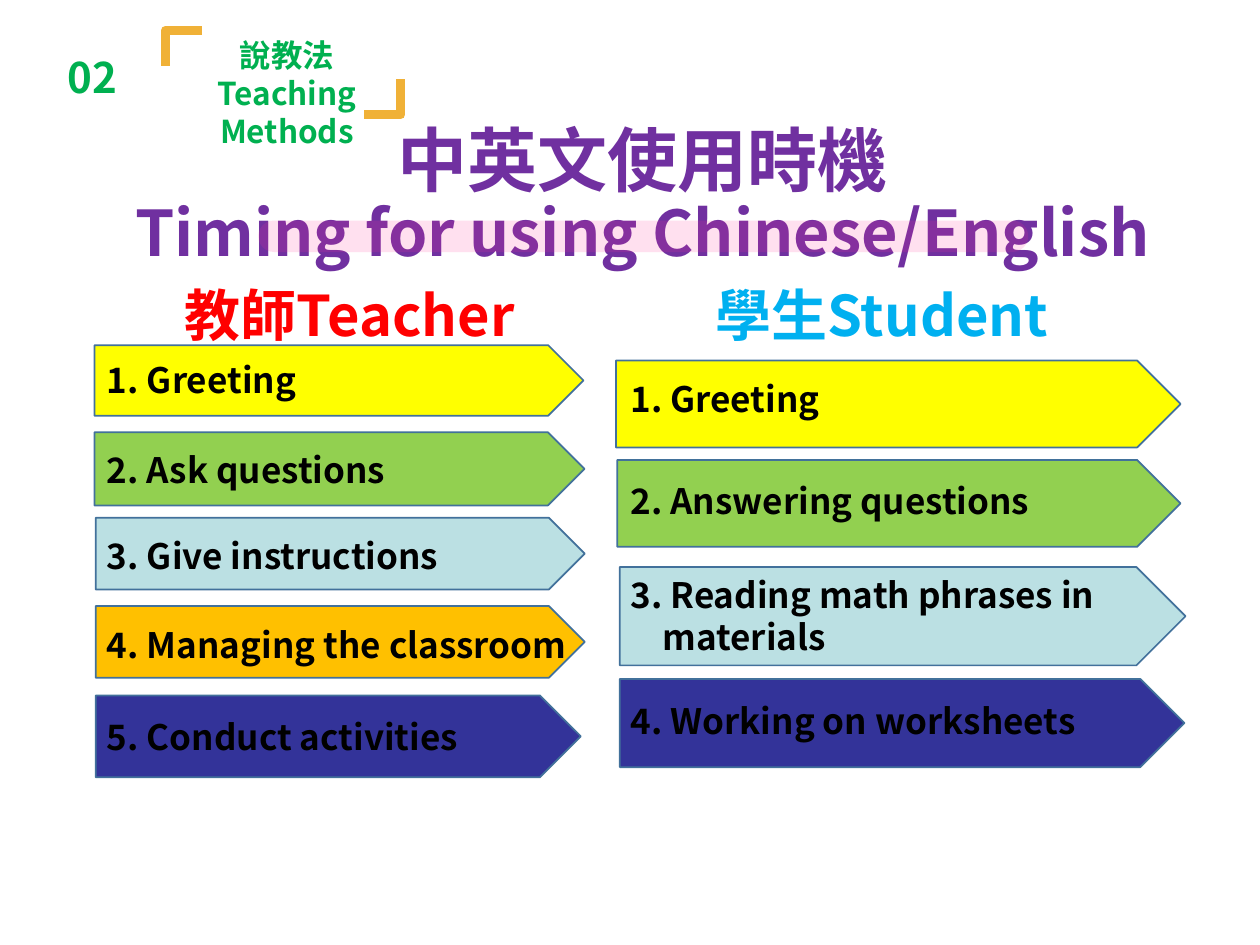
import pptx
import pptx.dml.color
import pptx.enum.shapes
import pptx.enum.text
import pptx.oxml
import pptx.oxml.ns
import pptx.util

Pt = pptx.util.Pt
RGB = pptx.dml.color.RGBColor
SHAPE = pptx.enum.shapes.MSO_SHAPE
ALIGN = pptx.enum.text.PP_ALIGN

GREEN = RGB(0x00, 0xB0, 0x50)
GOLD = RGB(0xF0, 0xB1, 0x37)
PURPLE = RGB(0x70, 0x30, 0xA0)
PINK = RGB(0xFF, 0x33, 0x99)
RED = RGB(0xFF, 0x00, 0x00)
SKY = RGB(0x00, 0xB0, 0xF0)
BLACK = RGB(0x00, 0x00, 0x00)
YELLOW = RGB(0xFF, 0xFF, 0x00)
LIME = RGB(0x92, 0xD0, 0x50)
PALE = RGB(0xBB, 0xE0, 0xE3)
ORANGE = RGB(0xFF, 0xC0, 0x00)
NAVY = RGB(0x33, 0x33, 0x99)
OUTLINE = RGB(0x42, 0x71, 0x9B)


class Deck:
    """Holds the font and the current slide; lengths are in points."""

    font = "Noto Sans CJK SC"

    def __init__(self, slide):
        self.s = slide

    def set_text(self, sp, lines, color, align=ALIGN.LEFT, spacing=None, hang=0):
        """Fill a shape with (text, size) paragraphs."""
        tf = sp.text_frame
        tf.word_wrap = True
        tf.auto_size = pptx.enum.text.MSO_AUTO_SIZE.NONE
        tf.vertical_anchor = pptx.enum.text.MSO_ANCHOR.TOP
        for i, (text, size) in enumerate(lines):
            p = tf.paragraphs[0] if i == 0 else tf.add_paragraph()
            p.text = text
            p.alignment = align
            p.space_before = Pt(0)
            if spacing:
                p.line_spacing = spacing
            pPr = p._p.get_or_add_pPr()
            pPr.set("marL", str(Pt(hang)))
            pPr.set("indent", str(-Pt(hang)))
            self.add_xml(pPr, "buNone")
            p.font.size = Pt(size)
            p.font.bold = True
            p.font.name = self.font
            p.font.color.rgb = color
            self.add_xml(pPr.find(pptx.oxml.ns.qn("a:defRPr")), "ea", typeface=self.font)

    def add_xml(self, parent, tag, **attrs):
        el = pptx.oxml.parse_xml(f"<a:{tag} {pptx.oxml.ns.nsdecls('a')}/>")
        for name, value in attrs.items():
            el.set(name, value)
        parent.append(el)

    def placeholder(self, idx, box, lines, color):
        sp = self.s.placeholders[idx]
        sp.left, sp.top, sp.width, sp.height = map(Pt, box)
        self.set_text(sp, lines, color, ALIGN.CENTER, 0.9)

    def text(self, box, lines, color, **style):
        sp = self.s.shapes.add_textbox(*map(Pt, box))
        self.set_text(sp, lines, color, **style)

    def shape(self, kind, box, fill, line=None, alpha=None):
        sp = self.s.shapes.add_shape(kind, *map(Pt, box))
        sp.shadow.inherit = False
        sp.adjustments[0] = 0.5
        sp.fill.solid()
        sp.fill.fore_color.rgb = fill
        if alpha:
            clr = sp._element.spPr.find(".//" + pptx.oxml.ns.qn("a:srgbClr"))
            self.add_xml(clr, "alpha", val=str(alpha * 1000))
        if line:
            sp.line.color.rgb = line
            sp.line.width = Pt(1)
        else:
            sp.line.fill.background()

    def bracket(self, points, color):
        start, *rest = [(Pt(x), Pt(y)) for x, y in points]
        fb = self.s.shapes.build_freeform(*start)
        fb.add_line_segments(rest, close=False)
        sp = fb.convert_to_shape()
        sp.shadow.inherit = False
        sp.fill.background()
        sp.line.color.rgb = color
        sp.line.width = Pt(5)

    def step(self, box, fill, text, label, hang=0):
        """A pentagon arrow with its label over it."""
        self.shape(SHAPE.PENTAGON, box, fill, OUTLINE)
        self.text(label, [(text, 20)], BLACK, hang=hang)


def main():
    prs = pptx.Presentation()
    prs.slide_width, prs.slide_height = Pt(720), Pt(540)
    deck = Deck(prs.slides.add_slide(prs.slide_layouts[3]))

    # Section number and name between corner brackets
    deck.text((31.7, 26, 45.4, 36), [("02", 24)], GREEN)
    deck.bracket([(94.5, 37.5), (94.5, 17.3), (115.3, 17.3)], GOLD)
    deck.bracket([(229, 45.4), (229, 65.6), (208, 65.6)], GOLD)
    deck.text((79, 17.3, 170, 47.5), [("說教法", 18), ("Teaching Methods", 18)],
              GREEN, align=ALIGN.CENTER)

    # Title with highlight
    deck.placeholder(0, (39.6, 68.4, 655, 90),
                     [("中英文使用時機", 40), ("Timing for using Chinese/English", 36)], PURPLE)
    deck.shape(SHAPE.ROUNDED_RECTANGLE, (147.6, 126, 440, 18), PINK, alpha=15)

    # Column headings
    deck.placeholder(1, (46.8, 161.3, 306, 323.3), [("教師Teacher", 32)], RED)
    deck.placeholder(2, (334.8, 161.3, 338.4, 325.4), [("學生Student", 32)], SKY)

    # Teacher steps: left, top, width, height, label top, fill, text
    teacher = [
        (54, 197.3, 279.4, 40.3, 201.6, YELLOW, "1. Greeting"),
        (54, 247, 280, 41.8, 252.7, LIME, "2. Ask questions"),
        (54.7, 295.9, 279.4, 41, 301.7, PALE, "3. Give instructions"),
        (54.7, 346.3, 279.4, 41, 352.8, ORANGE, "4. Managing the classroom"),
        (54.7, 397.4, 277.2, 46.8, 405.4, NAVY, "5. Conduct activities"),
    ]
    for x, y, w, h, label_y, fill, text in teacher:
        deck.step((x, y, w, h), fill, text, (54, label_y, 290, 31))

    # Student steps
    student = [
        (352, 206, 322.6, 49.7, 212.4, YELLOW, "1. Greeting"),
        (352.8, 262.8, 321.8, 49.7, 270.7, LIME, "2. Answering questions"),
        (354.2, 324, 323.3, 56.2, 324, PALE, "3. Reading math phrases in\vmaterials"),
        (354.2, 388, 322.6, 50.4, 396, NAVY, "4. Working on worksheets"),
    ]
    for x, y, w, h, label_y, fill, text in student:
        hang = 18.3 if "\v" in text else 0
        deck.step((x, y, w, h), fill, text, (353.2, label_y, 300, 55 if hang else 31), hang)

    # Drop the unused date, footer and number placeholders
    for ph in list(deck.s.placeholders):
        if ph.placeholder_format.idx > 2:
            ph._element.getparent().remove(ph._element)

    prs.save("out.pptx")


if __name__ == "__main__":
    main()
